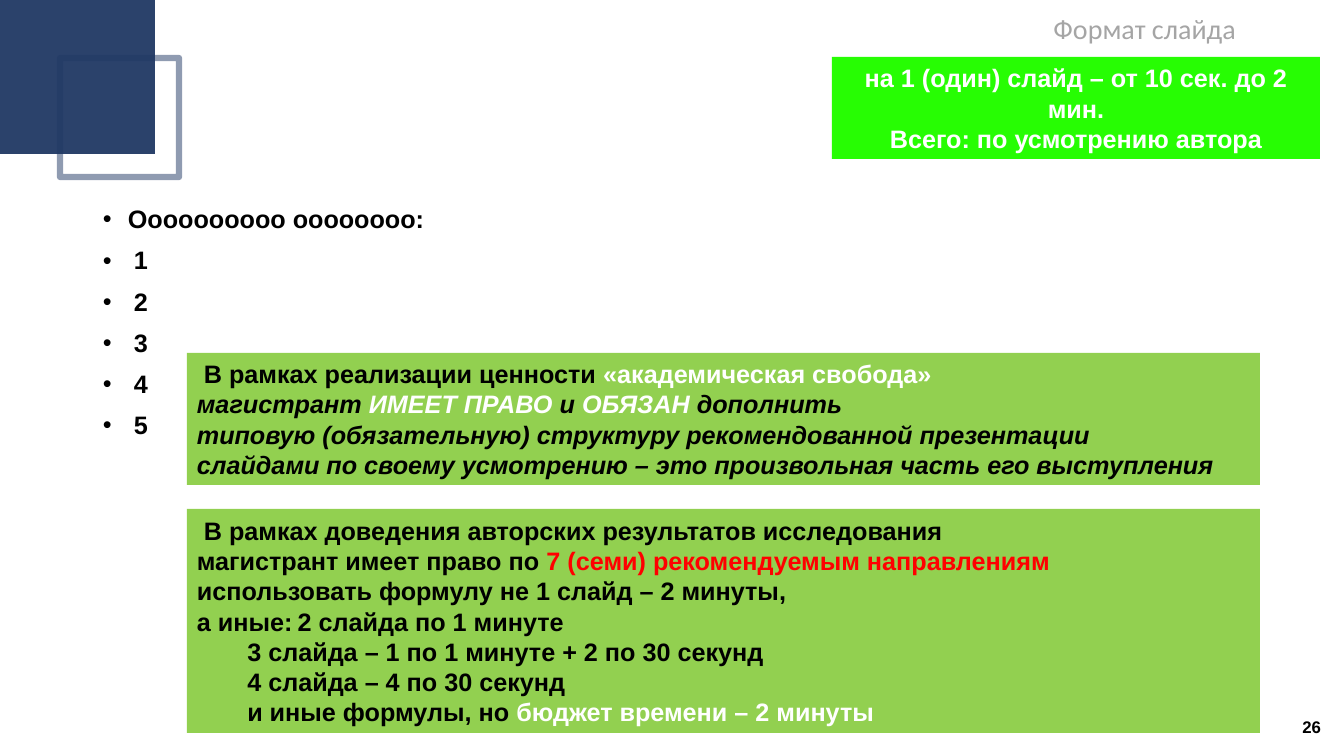
from dataclasses import dataclass

from lxml.etree import SubElement
from pptx import Presentation
from pptx.dml.color import RGBColor
from pptx.enum.shapes import MSO_SHAPE as Shape
from pptx.enum.text import MSO_ANCHOR as Anchor, PP_ALIGN as Align
from pptx.oxml.ns import qn
from pptx.util import Pt

EMU_PER_PX = 914400 / 100.8


@dataclass(frozen=True)
class Theme:
    navy: str = "203864"
    leaf: str = "92D050"
    lime: str = "27FD03"
    white: str = "FFFFFF"
    black: str = "000000"
    red: str = "FF0000"
    grey: str = "A5A5A5"
    font: str = "Arial"
    title_font: str = "Calibri"
    body: int = 18
    title: int = 20
    small: int = 12


THEME = Theme()


def px(length):
    return round(length * EMU_PER_PX)


def place(box):
    return [px(side) for side in box]


def set_alpha(color_format_fill, percent):
    """Make a solid fill partly transparent."""
    color = color_format_fill.find(".//" + qn("a:srgbClr"))
    SubElement(color, qn("a:alpha"), val=str(percent * 1000))


def add_rect(slide, box, fill=None, line=None, line_width=0, alpha=100):
    rect = slide.shapes.add_shape(Shape.RECTANGLE, *place(box))
    rect.shadow.inherit = False
    if fill:
        rect.fill.solid()
        rect.fill.fore_color.rgb = RGBColor.from_string(fill)
    else:
        rect.fill.background()
    if line:
        rect.line.color.rgb = RGBColor.from_string(line)
        rect.line.width = Pt(line_width)
    else:
        rect.line.fill.background()
    if alpha < 100:
        set_alpha(rect.element.spPr, alpha)
    return rect


def add_run(paragraph, text, color=THEME.black, size=THEME.body,
            font=THEME.font, bold=True, italic=False):
    run = paragraph.add_run()
    run.text = text
    run.font.name = font
    run.font.size = Pt(size)
    run.font.bold = bold
    run.font.italic = italic
    run.font.color.rgb = RGBColor.from_string(color)


def set_indent(paragraph, first=0, left=0, bullet=None, tab=None):
    props = paragraph._p.get_or_add_pPr()
    props.set("marL", str(px(left)))
    props.set("indent", str(px(first)))
    if bullet:
        SubElement(props, qn("a:buFont"), typeface=THEME.font)
        SubElement(props, qn("a:buChar"), char=bullet)
    if tab:
        stops = SubElement(props, qn("a:tabLst"))
        SubElement(stops, qn("a:tab"), pos=str(px(tab)), algn="l")


def write_lines(shape, lines, align=Align.LEFT, anchor=Anchor.MIDDLE,
                spacing=None, gap=0, indents=(), **style):
    """Each line is a list of (text, overrides) pairs; indents go line by line."""
    frame = shape.text_frame
    frame.word_wrap = True
    frame.vertical_anchor = anchor
    for number, line in enumerate(lines):
        paragraph = frame.paragraphs[0] if number == 0 else frame.add_paragraph()
        if indents:
            set_indent(paragraph, **indents[number])
        paragraph.alignment = align
        if spacing:
            paragraph.line_spacing = spacing
        if gap and number:
            paragraph.space_before = Pt(gap)
        for text, overrides in line:
            add_run(paragraph, text, **{**style, **overrides})
    return frame


def add_text(slide, box, lines, **layout):
    return write_lines(slide.shapes.add_textbox(*place(box)), lines, **layout)


def add_panel(slide, box, fill, lines, **layout):
    return write_lines(add_rect(slide, box, fill=fill), lines, **layout)


def add_corner(slide):
    add_rect(slide, (60, 58, 119, 119), line=THEME.navy, line_width=4.5, alpha=50)
    add_rect(slide, (0, 0, 155, 154), fill=THEME.navy, alpha=95)


def add_outline(slide):
    entries = ["Оооооооооо оооооооо:"] + [str(n) for n in range(1, 6)]
    hangs = [25] + [31] * 5
    add_text(slide, (93, 202, 1159, 480), [[(entry, {})] for entry in entries],
             anchor=Anchor.TOP, spacing=0.9, gap=10,
             indents=[dict(left=hang, first=-hang, bullet="•") for hang in hangs])


def main():
    deck = Presentation()
    deck.slide_width, deck.slide_height = px(1344), px(756)
    slide = deck.slides.add_slide(deck.slide_layouts[6])
    white, red = dict(color=THEME.white), dict(color=THEME.red)
    slanted, white_slanted = dict(italic=True), dict(italic=True, **white)
    opening = dict(first=7)

    add_corner(slide)
    add_outline(slide)

    freedom = [
        [("В рамках реализации ценности ", {}), ("«академическая свобода»", white)],
        [("магистрант ", slanted), ("ИМЕЕТ ПРАВО ", white_slanted), ("и ", slanted),
         ("ОБЯЗАН", white_slanted), (" дополнить", slanted)],
        [("типовую (обязательную) структуру рекомендованной презентации", slanted)],
        [("слайдами по своему усмотрению – это произвольная часть его выступления",
          slanted)],
    ]
    add_panel(slide, (187, 353, 1073, 132), THEME.leaf, freedom,
              indents=[opening] + [{}] * 3)

    timing = [[("на 1 (один) слайд – от 10 сек. до 2 мин.", {})],
              [("Всего: по усмотрению автора", {})]]
    add_panel(slide, (832, 57, 488, 102), THEME.lime, timing,
              align=Align.CENTER, **white)

    formulas = [
        [("В рамках доведения авторских результатов исследования", {})],
        [("магистрант имеет право по ", {}),
         ("7 (семи) рекомендуемым направлениям", red)],
        [("использовать формулу не 1 слайд – 2 минуты,", {})],
        [("а иные:\t2 слайда по 1 минуте", {})],
        [("\t3 слайда – 1 по 1 минуте + 2 по 30 секунд", {})],
        [("\t4 слайда – 4 по 30 секунд", {})],
        [("\tи иные формулы, но ", {}), ("бюджет времени – 2 минуты", white)],
    ]
    add_panel(slide, (187, 509, 1073, 224), THEME.leaf, formulas,
              indents=[opening] + [{}] * 2 + [dict(tab=151)] * 4)

    heading = add_text(slide, (136, 15, 1100, 39), [[("Формат слайда", {})]],
                       align=Align.RIGHT, anchor=Anchor.TOP, spacing=0.9,
                       color=THEME.grey, size=THEME.title,
                       font=THEME.title_font, bold=False)
    heading.margin_left = heading.margin_right = 0
    heading.margin_top = heading.margin_bottom = 0

    add_text(slide, (1029, 707, 302, 40), [[("26", {})]],
             align=Align.RIGHT, size=THEME.small)

    deck.save("out.pptx")


if __name__ == "__main__":
    main()
